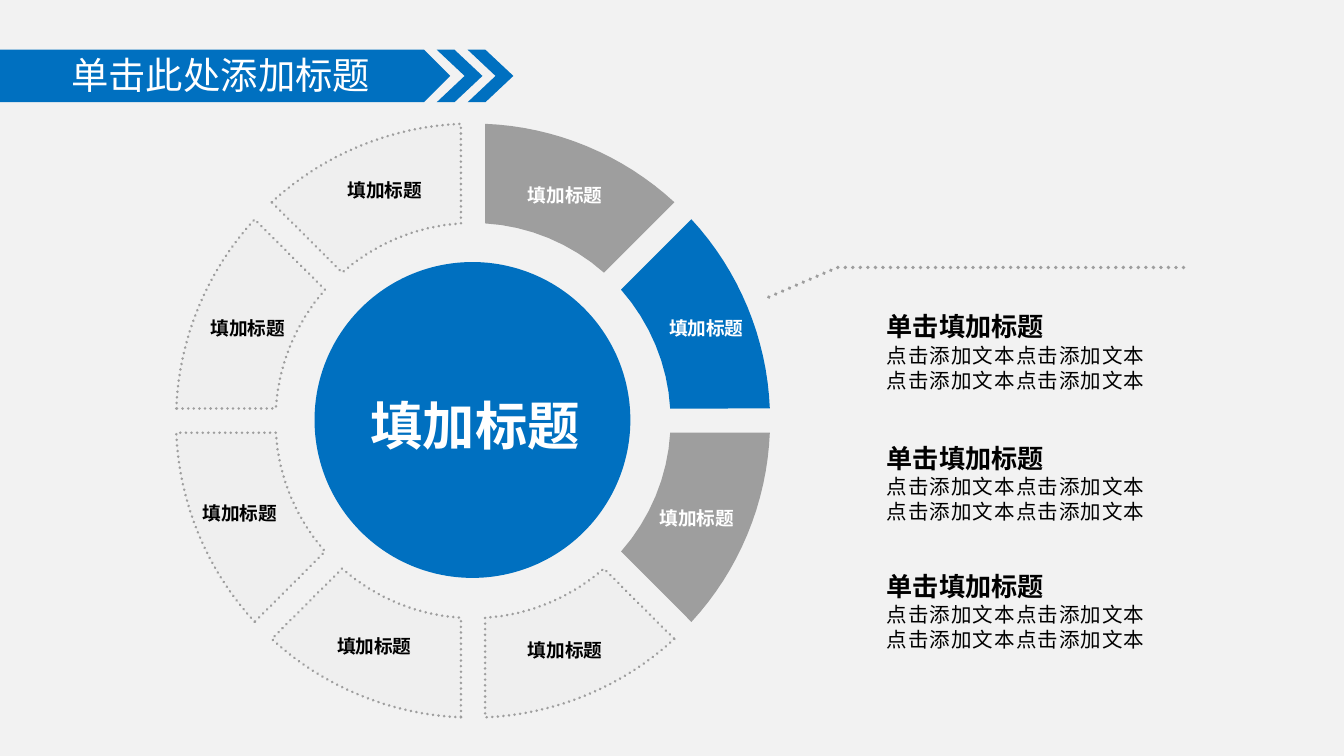
from math import asin, cos, radians, sin

from lxml import etree
from pptx import Presentation
from pptx.dml.color import RGBColor
from pptx.enum.dml import MSO_LINE
from pptx.enum.shapes import MSO_SHAPE
from pptx.enum.text import MSO_ANCHOR, MSO_AUTO_SIZE, PP_ALIGN
from pptx.oxml.ns import qn
from pptx.util import Inches, Pt

DOTTED = MSO_LINE.ROUND_DOT
PENTAGON, CHEVRON, OVAL = MSO_SHAPE.PENTAGON, MSO_SHAPE.CHEVRON, MSO_SHAPE.OVAL
LEFT, RIGHT, TOP = PP_ALIGN.LEFT, PP_ALIGN.RIGHT, MSO_ANCHOR.TOP
GROW, FIXED = MSO_AUTO_SIZE.SHAPE_TO_FIT_TEXT, MSO_AUTO_SIZE.NONE
FONT = "Noto Sans CJK SC"
COLORS = {"background": "F2F2F2", "blue": "0070C0", "gray": "9E9E9E",
          "pale": "D9D9D9", "white": "FFFFFF", "black": "000000"}


def style_shape(shape, fill=None, dots=None):
    """Give a shape a plain fill or none, and a dotted line or none."""
    shape.shadow.inherit = False
    if fill:
        shape.fill.solid()
        shape.fill.fore_color.rgb = RGBColor.from_string(COLORS[fill])
    else:
        shape.fill.background()
    if dots:
        shape.line.color.rgb = RGBColor.from_string(COLORS["gray"])
        shape.line.width = Pt(dots)
        shape.line.dash_style = DOTTED
        shape._element.spPr.find(qn("a:ln")).set("cap", "rnd")
    else:
        shape.line.fill.background()


def add_span(para, text, size, color, bold=False, align=LEFT):
    """Add one formatted run and set the line pitch of its paragraph."""
    para.alignment = align
    para.line_spacing = Pt(size * 1.22)
    span = para.add_run()
    span.text = text
    span.font.size = Pt(size)
    span.font.bold = bold
    span.font.color.rgb = RGBColor.from_string(COLORS[color])
    span.font.name = FONT
    etree.SubElement(span.font._element, qn("a:ea"), typeface=FONT)
    return span


# Widescreen page, 16 to 9
deck = Presentation()
deck.slide_width = Inches(10)
deck.slide_height = Inches(10) * 9 // 16
page = deck.slides.add_slide(deck.slide_layouts[5])
page.background.fill.solid()
page.background.fill.fore_color.rgb = RGBColor.from_string(COLORS["background"])

# Title banner, placed behind the title
title = page.shapes.title
for kind, left, width in ((PENTAGON, 0, 3.35),
                          (CHEVRON, 3.25, 0.34),
                          (CHEVRON, 3.48, 0.34)):
    banner = page.shapes.add_shape(kind, Inches(left), Inches(0.37),
                                   Inches(width), Inches(0.39))
    style_shape(banner, "blue")
    if kind == CHEVRON:
        banner.adjustments[0] = 0.61
    title._element.addprevious(banner._element)

title.left, title.top = Inches(0.43), Inches(0.33)
title.width, title.height = Inches(2.7), Inches(0.47)
title.text_frame.auto_size = FIXED
title.text_frame.vertical_anchor = TOP
add_span(title.text_frame.paragraphs[0], "单击此处添加标题", 20, "white")

# Central disc
disc = page.shapes.add_shape(OVAL, Inches(2.34), Inches(1.95),
                             Inches(2.35), Inches(2.35))
style_shape(disc, "blue")
box = page.shapes.add_textbox(Inches(2.64), Inches(2.87), Inches(1.77), Inches(0.57))
box.text_frame.word_wrap = False
box.text_frame.auto_size = GROW
add_span(box.text_frame.paragraphs[0], "填加标题", 28, "white", True, RIGHT)

# Ring of eight segments, clockwise from the top, with parallel gaps
CENTER_X, CENTER_Y = 3.52, 3.13
OUTER, INNER, HALF_GAP = 2.21, 1.47, 0.09
SEGMENT_FILLS = ["gray", "blue", "gray"] + ["pale"] * 5
ring = page.shapes.add_group_shape()
for index, fill in enumerate(SEGMENT_FILLS):
    points = []
    for radius, steps in ((OUTER, 16), (INNER, 8)):
        trim = asin(HALF_GAP / radius)
        start = radians(45 * index) + trim
        sweep = radians(45) - 2 * trim
        arc = [(Inches(CENTER_X + radius * sin(start + sweep * step / steps)),
                Inches(CENTER_Y - radius * cos(start + sweep * step / steps)))
               for step in range(steps + 1)]
        points += arc if radius == OUTER else arc[::-1]
    builder = ring.shapes.build_freeform(*points[0])
    builder.add_line_segments(points[1:], close=True)
    segment = builder.convert_to_shape()
    style_shape(segment, fill, 1.5 if fill == "pale" else None)
    if fill == "pale":
        tint = segment._element.spPr.find(qn("a:solidFill"))[0]
        etree.SubElement(tint, qn("a:alpha"), val="10000")

# Segment labels
LABEL_PLACES = [(3.82, 1.32), (4.87, 2.31), (4.8, 3.72), (3.82, 4.7),
                (2.4, 4.67), (1.4, 3.68), (1.46, 2.31), (2.48, 1.28)]
for (left, top), fill in zip(LABEL_PLACES, SEGMENT_FILLS):
    label = ring.shapes.add_textbox(Inches(left), Inches(top), Inches(0.76), Inches(0.27))
    label.text_frame.word_wrap = False
    label.text_frame.auto_size = GROW
    color = "black" if fill == "pale" else "white"
    add_span(label.text_frame.paragraphs[0], "填加标题", 10, color, True, RIGHT)

# Dotted leader from the blue segment
builder = page.shapes.build_freeform(Inches(5.72), Inches(2.21))
builder.add_line_segments([(Inches(6.23), Inches(1.99)),
                           (Inches(8.81), Inches(1.99))], close=False)
style_shape(builder.convert_to_shape(), dots=2)

# Three text blocks
for top in (2.26, 3.24, 4.19):
    box = page.shapes.add_textbox(Inches(6.5), Inches(top), Inches(2.21), Inches(0.71))
    frame = box.text_frame
    frame.word_wrap = True
    frame.auto_size = GROW
    add_span(frame.paragraphs[0], "单击填加标题", 14, "black", True)
    for _ in range(2):
        para = frame.add_paragraph()
        para.level = 1
        settings = para._p.get_or_add_pPr()
        settings.set("marL", "0")
        settings.set("indent", "0")
        tabs = etree.SubElement(settings, qn("a:tabLst"))
        etree.SubElement(tabs, qn("a:tab"), pos=str(Inches(0.15)), algn="l")
        span = add_span(para, "点击添加文本点击添加文本", 11, "black")
        span.font._element.set("spc", "50")

deck.save("out.pptx")
